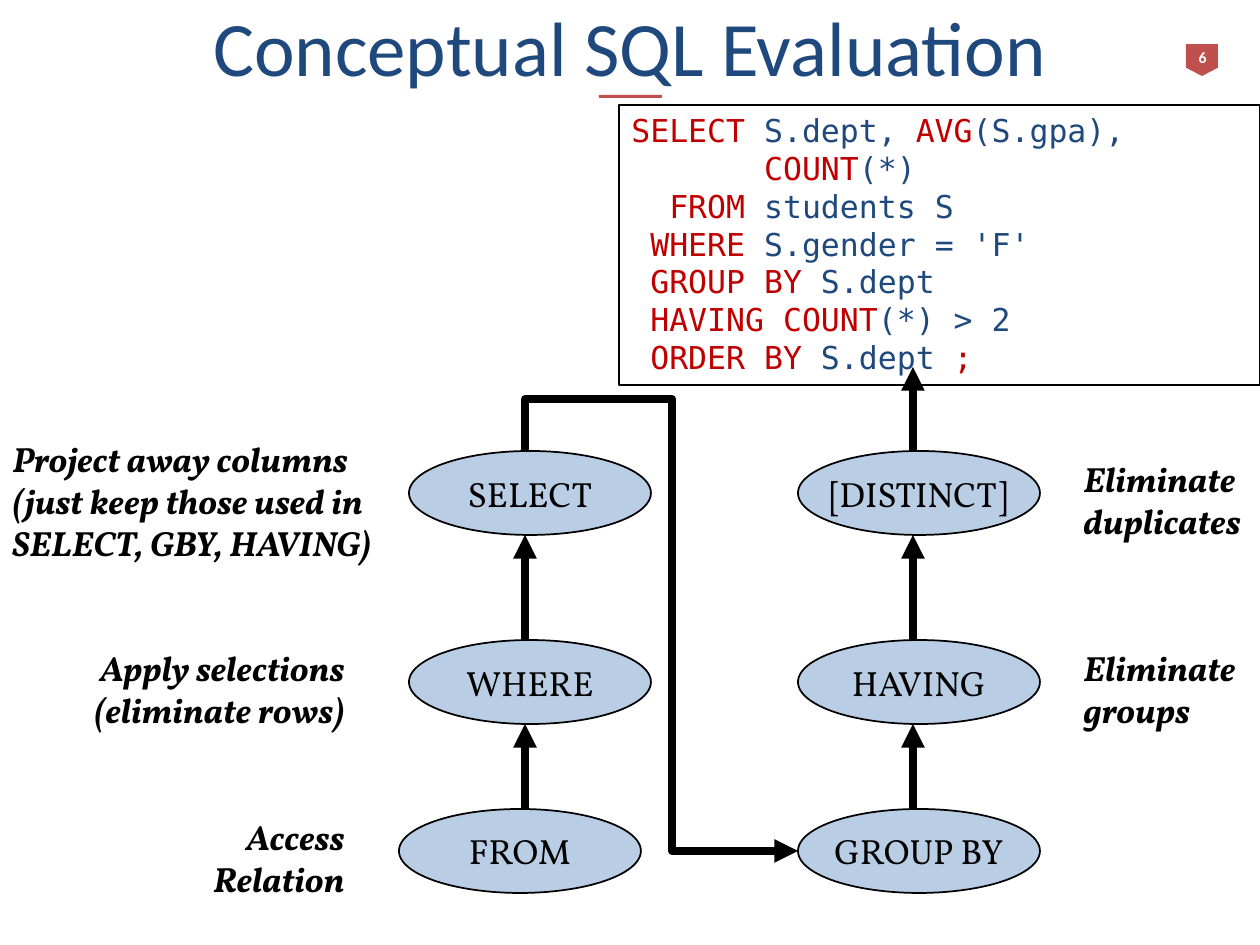
"""Build the slide on the conceptual evaluation order of an SQL query."""
from dataclasses import dataclass

from lxml.etree import SubElement
from pptx import Presentation
from pptx.dml.color import RGBColor
from pptx.enum.shapes import MSO_CONNECTOR as Connector, MSO_SHAPE as Preset
from pptx.enum.text import MSO_ANCHOR as Anchor, PP_ALIGN as Align
from pptx.oxml.ns import qn
from pptx.util import Pt

SCALE = 914400 / 126
COLORS = {"navy": "1F497D", "red": "C0504D", "keyword": "C00000",
          "oval": "B9CDE5", "black": "000000", "white": "FFFFFF"}
HEADING, CODE, BODY = "Calibri", "DejaVu Sans Mono", "Vollkorn"
OVAL_WIDTH, OVAL_HEIGHT = 242, 84
ROWS = (451, 640, 809)
LEFT_ARROW, RIGHT_ARROW = 525, 913

STEPS = [("SELECT", 409, ROWS[0]), ("WHERE", 409, ROWS[1]), ("FROM", 399, ROWS[2]),
         ("[DISTINCT]", 798, ROWS[0]), ("HAVING", 798, ROWS[1]), ("GROUP BY", 798, ROWS[2])]

NOTES = [
    (["Access", "Relation"], (84, 809, 273, 97), Align.RIGHT),
    (["Apply selections", "(eliminate rows)"], (0, 640, 357, 97), Align.RIGHT),
    (["Project away columns", "(just keep those used in SELECT, GBY, HAVING)"],
     (0, 431, 431, 139), Align.LEFT),
    (["Eliminate groups"], (1071, 640, 189, 97), Align.LEFT),
    (["Eliminate duplicates"], (1071, 451, 189, 97), Align.LEFT),
]

QUERY = [
    ("SELECT ", "S.dept, ", "AVG", "(S.gpa),"),
    ("       COUNT", "(*)"),
    ("  FROM", " students S"),
    (" WHERE ", "S.gender = 'F'"),
    (" GROUP BY ", "S.dept"),
    (" HAVING COUNT", "(*) > 2"),
    (" ORDER BY ", "S.dept ", ";"),
]


def emu(px):
    return round(px * SCALE)


def rgb(name):
    return RGBColor.from_string(COLORS[name])


@dataclass
class Painter:
    """Draw styled elements on one slide."""
    page: object

    def shape(self, preset, bounds, fill=None, line=None):
        shape = self.page.shapes.add_shape(preset, *map(emu, bounds))
        shape.shadow.inherit = False
        if fill:
            shape.fill.solid()
            shape.fill.fore_color.rgb = rgb(fill)
        else:
            shape.fill.background()
        if line:
            shape.line.color.rgb = rgb(line)
            shape.line.width = Pt(1)
        else:
            shape.line.fill.background()
        return shape

    def set_lines(self, box, lines, size, font, color="black", align=Align.LEFT,
                  anchor=Anchor.TOP, wrap=True, bold=False, italic=False):
        frame = box.text_frame
        frame.word_wrap = wrap
        frame.vertical_anchor = anchor
        for index, line in enumerate(lines):
            para = frame.add_paragraph() if index else frame.paragraphs[0]
            para.alignment = align
            para.font.size, para.font.name = Pt(size), font
            para.font.bold, para.font.italic = bold, italic
            para.font.color.rgb = rgb(color)
            para.add_run().text = line

    def text(self, lines, bounds, size, font, **style):
        box = self.page.shapes.add_textbox(*map(emu, bounds))
        self.set_lines(box, lines, size, font, **style)

    def oval(self, label, left, top):
        oval = self.shape(Preset.OVAL, (left, top, OVAL_WIDTH, OVAL_HEIGHT), "oval", "black")
        self.set_lines(oval, [label], 20, BODY, align=Align.CENTER,
                       anchor=Anchor.MIDDLE, wrap=False)

    def query(self, lines, bounds):
        frame = self.shape(Preset.RECTANGLE, bounds, line="black").text_frame
        frame.word_wrap = True
        frame.vertical_anchor = Anchor.TOP
        for index, parts in enumerate(lines):
            para = frame.add_paragraph() if index else frame.paragraphs[0]
            para.alignment = Align.LEFT
            para.font.size, para.font.name = Pt(18), CODE
            for position, part in enumerate(parts):
                span = para.add_run()
                span.text = part
                span.font.color.rgb = rgb("navy" if position % 2 else "keyword")

    def point(self, arrow):
        arrow.line.color.rgb = rgb("black")
        arrow.line.width = Pt(4.5)
        outline = arrow._element.spPr.find(qn("a:ln"))
        SubElement(outline, qn("a:round"))
        SubElement(outline, qn("a:tailEnd"), type="triangle")

    def arrow_up(self, x, bottom, top):
        arrow = self.page.shapes.add_connector(
            Connector.STRAIGHT, emu(x), emu(bottom), emu(x), emu(top))
        self.point(arrow)
        SubElement(arrow._element.spPr, qn("a:effectLst"))

    def bent_arrow(self, start, *corners):
        builder = self.page.shapes.build_freeform(*start, scale=SCALE)
        builder.add_line_segments(corners, close=False)
        arrow = builder.convert_to_shape()
        arrow.shadow.inherit = False
        arrow.fill.background()
        self.point(arrow)


def main():
    deck = Presentation()
    deck.slide_width, deck.slide_height = emu(1260), emu(945)
    painter = Painter(deck.slides.add_slide(deck.slide_layouts[6]))

    flag = painter.shape(Preset.PENTAGON, (1186, 44, 32, 32), "red")
    flag.rotation = 90
    flag.adjustments[0] = 0.26
    painter.text(["6"], (1182, 42, 41, 31), 9, HEADING, color="white", bold=True,
                 align=Align.CENTER, anchor=Anchor.MIDDLE, wrap=False)
    painter.text(["Conceptual SQL Evaluation"], (63, 10, 1134, 72), 44, HEADING,
                 color="navy", align=Align.CENTER, anchor=Anchor.MIDDLE)
    painter.shape(Preset.RECTANGLE, (599, 95, 63, 3), "red")
    painter.query(QUERY, (619, 105, 641, 280))

    for label, left, top in STEPS:
        painter.oval(label, left, top)
    for lines, bounds, align in NOTES:
        painter.text(lines, bounds, 20, BODY, align=align, bold=True, italic=True)

    for x in (LEFT_ARROW, RIGHT_ARROW):
        for upper, lower in zip(ROWS, ROWS[1:]):
            painter.arrow_up(x, lower, upper + OVAL_HEIGHT)
    painter.bent_arrow((LEFT_ARROW, ROWS[0]), (LEFT_ARROW, 399), (672, 399),
                       (672, 851), (798, 851))
    painter.arrow_up(RIGHT_ARROW, ROWS[0], 367)

    deck.save("out.pptx")


if __name__ == "__main__":
    main()
